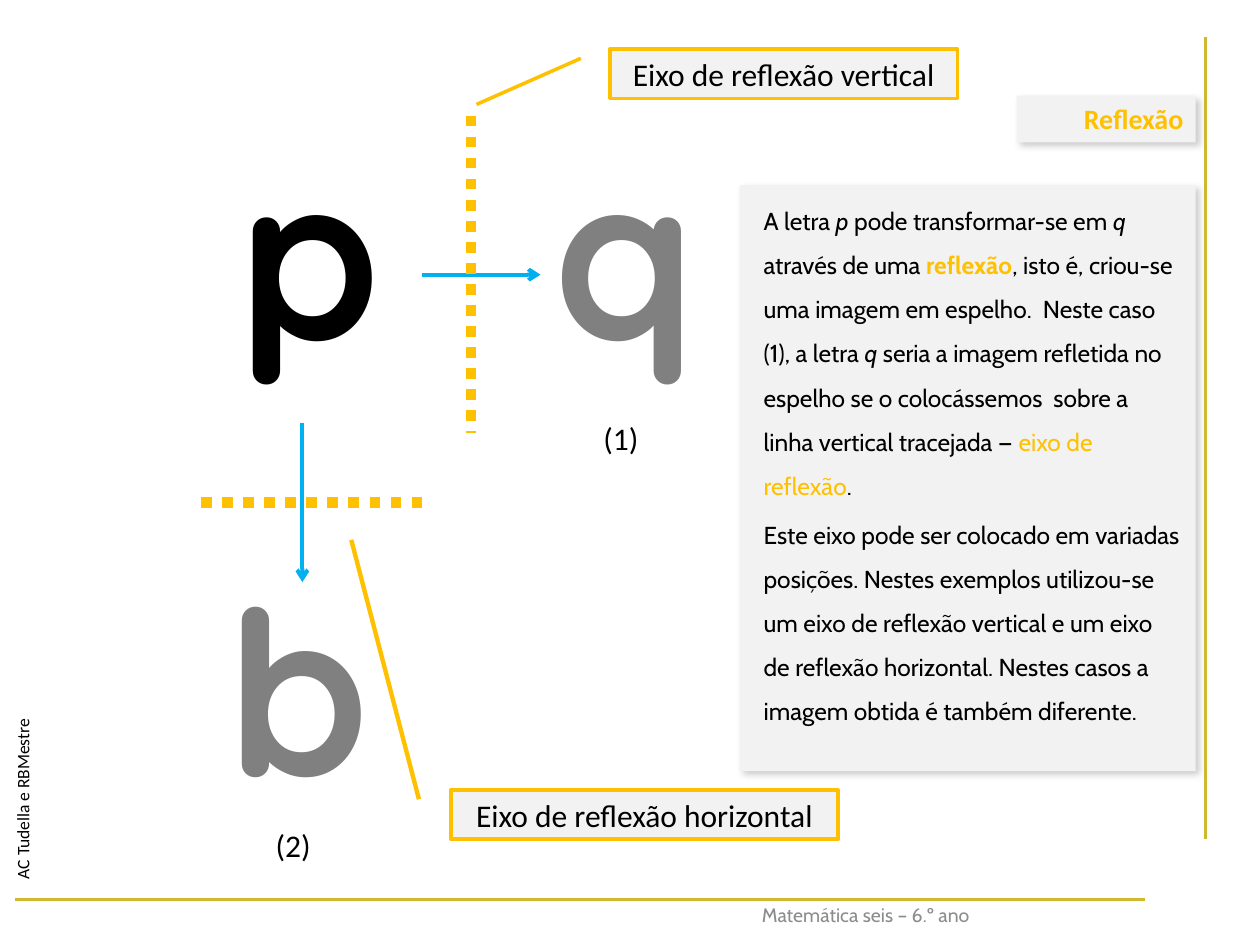
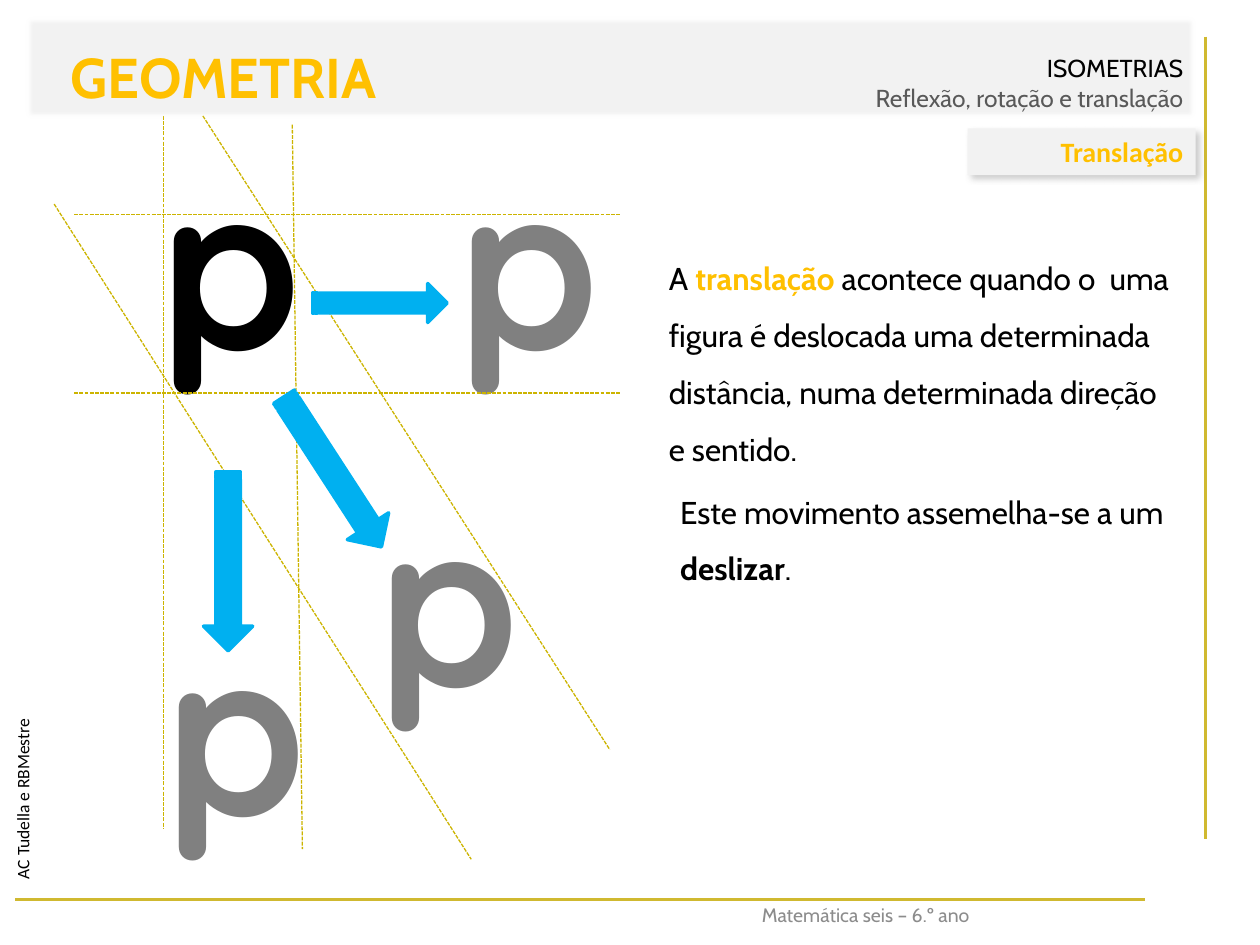
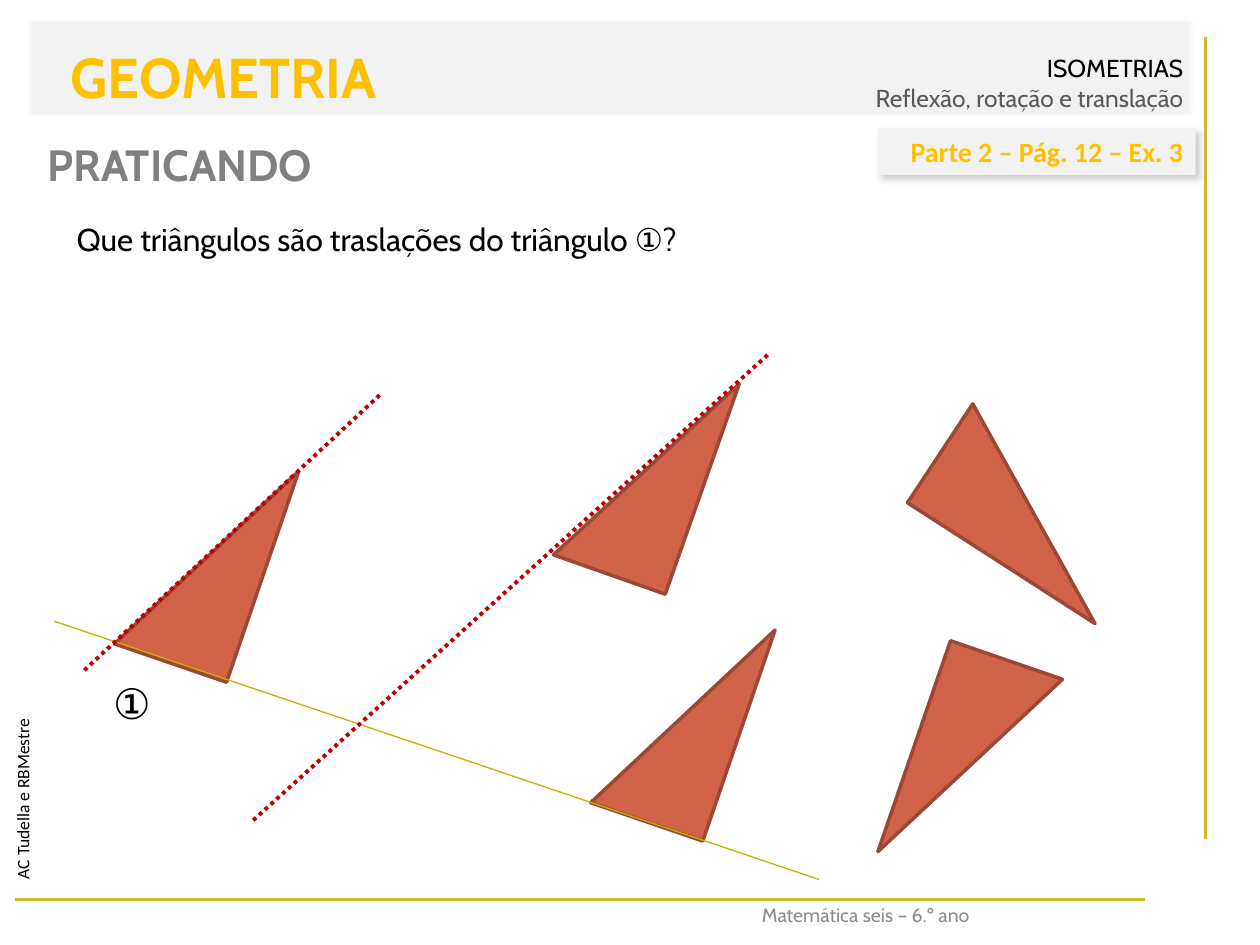
from pptx import Presentation
from pptx.dml.color import RGBColor
from pptx.enum.dml import MSO_LINE
from pptx.enum.shapes import MSO_CONNECTOR, MSO_SHAPE
from pptx.enum.text import MSO_ANCHOR, PP_ALIGN
from pptx.oxml import parse_xml
from pptx.oxml.ns import nsdecls, qn
from pptx.util import Inches, Pt

RECT, CALLOUT = MSO_SHAPE.RECTANGLE, MSO_SHAPE.LINE_CALLOUT_1
ARROW, TRIANGLE = MSO_SHAPE.STRIPED_RIGHT_ARROW, MSO_SHAPE.ISOSCELES_TRIANGLE
DOT, DASH = MSO_LINE.ROUND_DOT, MSO_LINE.SQUARE_DOT
LEFT, CENTER, RIGHT = PP_ALIGN.LEFT, PP_ALIGN.CENTER, PP_ALIGN.RIGHT
TOP, MIDDLE, BOTTOM = MSO_ANCHOR.TOP, MSO_ANCHOR.MIDDLE, MSO_ANCHOR.BOTTOM
STRAIGHT = MSO_CONNECTOR.STRAIGHT

GOLD, BLUE, BLACK, GREY, PALE = "FFC000", "00B0F0", "000000", "808080", "F2F2F2"
FRAME, GUIDE, BRICK, RUST, RED = "D0B930", "CCB400", "D16349", "9B4936", "C00000"
TEXT, PLAIN, ROUND = "Cabin", "Calibri", "Quicksand"
SHADOW = (f'<a:outerShdw {nsdecls("a")} blurRad="50800" dist="38100" dir="2700000" '
          'algn="tl" rotWithShape="0"><a:srgbClr val="808080">'
          '<a:alpha val="40000"/></a:srgbClr></a:outerShdw>')
SOFT = f'<a:softEdge {nsdecls("a")} rad="31750"/>'
HEAD = f'<a:tailEnd {nsdecls("a")} type="arrow"/>'
hue = RGBColor.from_string


def put(slide, box, paras=(), size=18, font=TEXT, color=BLACK, bold=False,
        align=LEFT, anchor=TOP, pitch=1, kind=None, fill=None, edge=None,
        width=2, spin=0, effect=None):
    """Add a shape, or a text box if kind is None.

    A paragraph is a string or a list of (text, marks); the marks are
    i for italic, b for bold and g for gold.
    """
    box = [Inches(n) for n in box]
    if kind is None:
        shape = slide.shapes.add_textbox(*box)
    else:
        shape = slide.shapes.add_shape(kind, *box)
        shape.shadow.inherit = False
        shape.fill.solid()
        shape.fill.fore_color.rgb = hue(fill)
        if edge:
            shape.line.color.rgb = hue(edge)
            shape.line.width = Pt(width)
        else:
            shape.line.fill.background()
        if effect:
            shape._element.spPr.find(qn("a:effectLst")).append(parse_xml(effect))
    shape.rotation = spin
    frame = shape.text_frame
    frame.word_wrap = True
    frame.vertical_anchor = anchor
    for i, parts in enumerate(paras):
        para = frame.add_paragraph() if i else frame.paragraphs[0]
        para.alignment = align
        para.line_spacing = pitch
        if isinstance(parts, str):
            parts = [(parts, "")]
        for text, marks in parts:
            run = para.add_run()
            run.text = text
            run.font.name = font
            run.font.size = Pt(size)
            run.font.bold = bold or "b" in marks
            run.font.italic = "i" in marks
            run.font.color.rgb = hue(GOLD if "g" in marks else color)
    return shape


def rule(slide, ends, color, width, dash=None, arrow=False):
    """Add a straight line from (x1, y1) to (x2, y2)."""
    line = slide.shapes.add_connector(STRAIGHT, *[Inches(n) for n in ends])
    line.line.color.rgb = hue(color)
    line.line.width = Pt(width)
    if dash:
        line.line.dash_style = dash
    if arrow:
        line.line._get_or_add_ln().append(parse_xml(HEAD))
    line._element.spPr.append(parse_xml(f'<a:effectLst {nsdecls("a")}/>'))


deck = Presentation()
deck.slide_width, deck.slide_height = Inches(10), Inches(7.5)
slides = [deck.slides.add_slide(deck.slide_layouts[6]) for _ in range(3)]
mirror, shift, drill = slides

# Frame lines and footers
for slide in slides:
    rule(slide, (9.57, 0.29, 9.57, 6.66), FRAME, 1.5)
    rule(slide, (0.12, 7.14, 9.09, 7.14), FRAME, 1.5)
    put(slide, (4.61, 7.14, 4.52, 0.27), ["Matemática seis – 6.º ano"],
        size=11.1, color="8C8C8C", align=CENTER, pitch=0.9)
    put(slide, (-1.34, 5.29, 3.17, 0.4), ["AC Tudella e RBMestre"],
        size=10, font=PLAIN, spin=270)

# Reflection: explanation
panel = put(mirror, (5.87, 1.47, 3.62, 4.65), [
    [("A letra ", ""), ("p", "i"), (" pode transformar-se em ", ""), ("q ", "i"),
     ("através de uma ", ""), ("reflexão", "bg"),
     (", isto é, criou-se uma imagem em espelho.  Neste caso (1), a letra ", ""),
     ("q", "i"),
     (" seria a imagem refletida no espelho se o colocássemos  sobre a "
      "linha vertical tracejada — ", ""),
     ("eixo de reflexão", "g"), (".", "")],
    "Este eixo pode ser colocado em variadas posições. Nestes exemplos "
    "utilizou-se um eixo de reflexão vertical e um eixo de reflexão horizontal. "
    "Nestes casos a imagem obtida é também diferente.",
], size=14, pitch=1.5, kind=RECT, fill=PALE, effect=SHADOW)
panel.text_frame.margin_left = Inches(0.19)
panel.text_frame.paragraphs[1].space_before = Pt(2.8)

# Large letters
for slide, letter, box, color in (
        (mirror, "q", (4.06, 0.84, 1.81, 2.29), GREY),
        (mirror, "p", (1.73, 0.84, 1.45, 2.29), BLACK),
        (mirror, "b", (1.54, 4.3, 1.65, 2.29), GREY),
        (shift, "p", (1.1, 0.92, 1.45, 2.29), BLACK),
        (shift, "p", (3.47, 0.92, 1.45, 2.29), GREY),
        (shift, "p", (2.83, 3.59, 1.45, 2.29), GREY),
        (shift, "p", (1.14, 4.62, 1.45, 2.29), GREY)):
    put(slide, box, [letter], size=130, font=ROUND, color=color, bold=True,
        align=CENTER)

# Reflection: axes, arrows and labels
rule(mirror, (3.35, 2.18, 4.29, 2.18), BLUE, 2.25, arrow=True)
for axis in ((3.74, 0.92, 3.74, 3.44), (3.35, 3.99, 1.54, 3.99)):
    rule(mirror, axis, GOLD, 6, DOT)
for name, box, width, bends in (
        ("vertical", (4.84, 0.39, 2.76, 0.39), 2, ()),
        ("horizontal", (3.58, 6.27, 3.07, 0.39), 2.5,
         (0.188, -0.083, -5.089, -0.258))):
    note = put(mirror, box, [f"Eixo de reflexão {name}"], font=PLAIN, align=CENTER,
               anchor=MIDDLE, kind=CALLOUT, fill=PALE, edge=GOLD, width=width)
    for i, bend in enumerate(bends):
        note.adjustments[i] = bend
rule(mirror, (2.4, 3.36, 2.4, 4.62), BLUE, 2.25, arrow=True)
for mark, x, y in (("(1)", 4.69, 3.28), ("(2)", 2.09, 6.51)):
    put(mirror, (x, y, 0.63, 0.4), [mark], font=PLAIN)

# Translation: explanation, guides and arrows
story = put(shift, (5.21, 1.86, 4.17, 3.78), [
    [("A ", ""), ("translação ", "bg"),
     ("acontece quando o  uma figura é deslocada uma determinada distância, "
      "numa determinada direção e sentido.", "")],
    [("Este movimento assemelha-se a um ", ""), ("deslizar", "b"), (".", "")],
], pitch=1.5)
close = story.text_frame.paragraphs[1]
close.space_before = Pt(3.6)
close._p.get_or_add_pPr().set("marL", str(Inches(0.09)))

for ends in ((0.59, 1.7, 4.92, 1.7), (0.59, 3.12, 4.92, 3.12),
             (0.43, 1.62, 3.74, 6.82), (1.61, 0.92, 4.84, 5.95),
             (1.3, 0.92, 1.3, 6.58), (2.32, 0.99, 2.4, 6.74)):
    rule(shift, ends, GUIDE, 0.75, DASH)
for box, spin in (((2.48, 2.25, 1.07, 0.31), 0),
                  ((1.93, 3.55, 1.42, 0.39), 57),
                  ((1.1, 4.26, 1.42, 0.39), 90)):
    put(shift, box, kind=ARROW, fill=BLUE, edge=BLUE, spin=spin)

# Practice: question, triangles and directions
put(drill, (0.51, 1.55, 8.82, 0.6),
    ["Que triângulos são traslações do triângulo ①?"], pitch=1.5)
put(drill, (0.8, 5.33, 0.6, 0.5), ["①"], size=24)
for x, y, spin, peak in ((1.17, 3.54, 18.9, 1), (4.95, 4.8, 18.9, 1),
                         (7.73, 3.2, 123.4, 0.98), (4.66, 2.84, 19.4, 1),
                         (7.23, 5.19, 199, 1)):
    shape = put(drill, (x, y, 0.94, 1.77), kind=TRIANGLE, fill=BRICK, edge=RUST,
                spin=spin)
    shape.adjustments[0] = peak
rule(drill, (0.43, 4.93, 6.5, 6.98), "C8B000", 0.75)
for ends in ((0.67, 5.32, 3.03, 3.12), (2.01, 6.51, 6.1, 2.81)):
    rule(drill, ends, RED, 2.25, DOT)

# Header bands
for slide in (shift, drill):
    band = put(slide, (0.2, 0.13, 9.29, 0.81),
               ["ISOMETRIAS", "Reflexão, rotação e translação"], size=14,
               align=RIGHT, anchor=BOTTOM, kind=RECT, fill=PALE, effect=SOFT)
    band.text_frame.paragraphs[1].runs[0].font.color.rgb = hue("595959")
    put(slide, (0.28, 0.29, 2.99, 0.64), ["GEOMETRIA"], size=32, color=GOLD,
        bold=True, align=CENTER)
put(drill, (0.28, 0.92, 5.51, 0.77), ["PRATICANDO"], size=25, color=GREY,
    bold=True, anchor=MIDDLE)

# Topic tags, flush with the right edge of the band
for slide, topic, y, width in ((mirror, "Reflexão", 0.76, 1.42),
                               (shift, "Translação", 1.02, 1.81),
                               (drill, "Parte 2 – Pág. 12 – Ex. 3", 1.02, 2.52)):
    put(slide, (9.49 - width, y, width, 0.37), [topic], size=16, font=PLAIN,
        color=GOLD, bold=True, align=RIGHT, kind=RECT, fill=PALE, effect=SHADOW)

deck.save("out.pptx")
